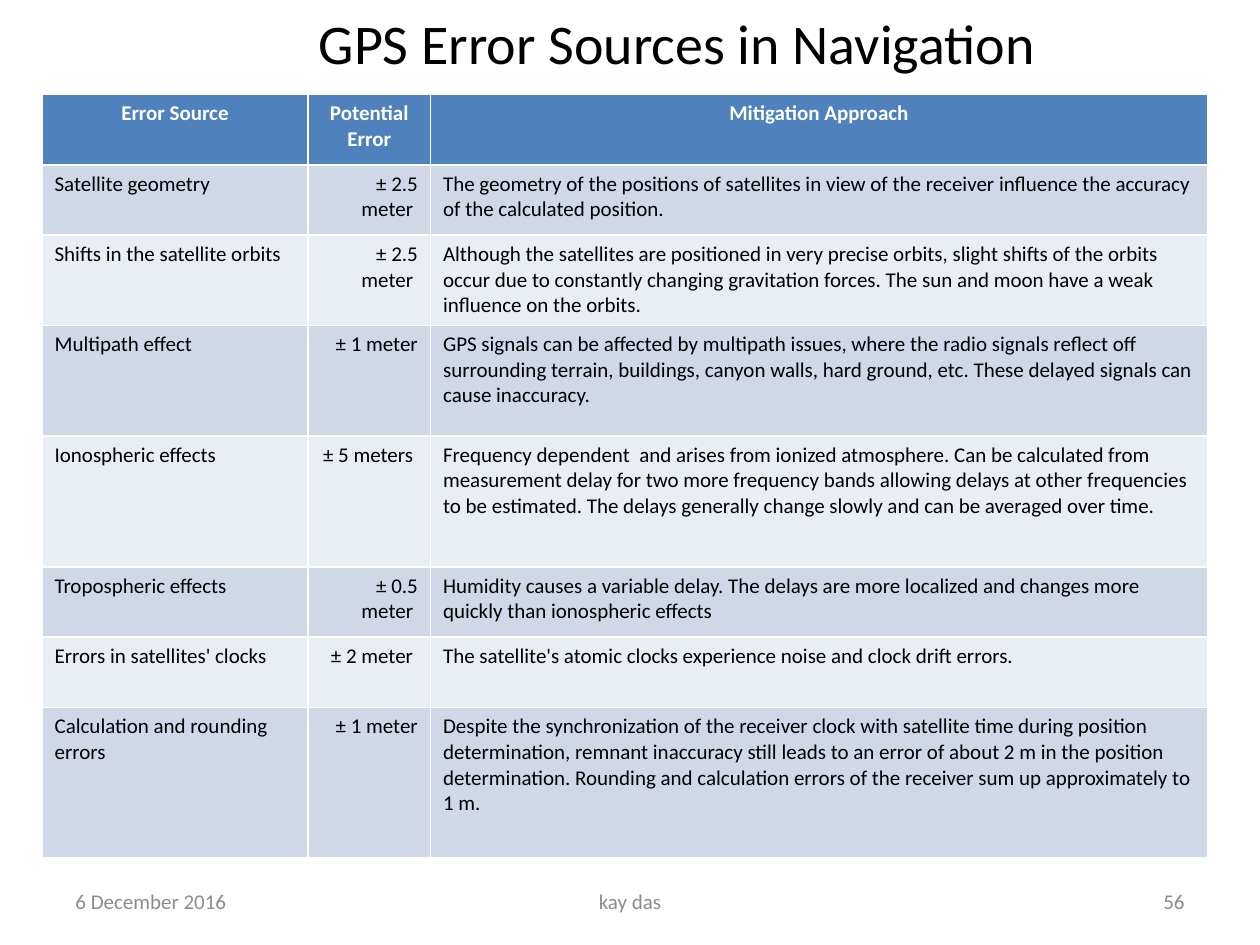
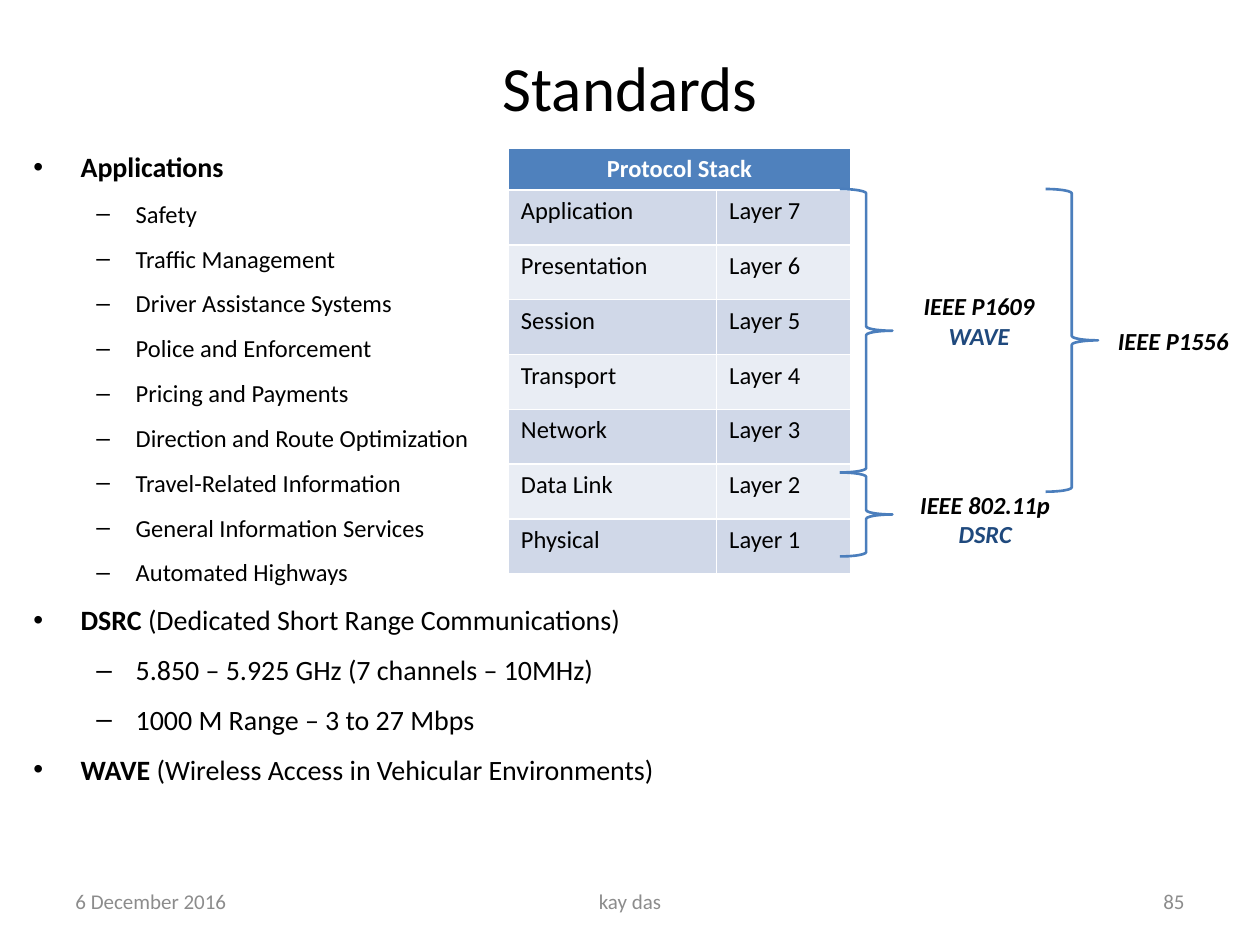
from pptx import Presentation
from pptx.dml.color import RGBColor
from pptx.enum.shapes import MSO_SHAPE
from pptx.enum.text import MSO_ANCHOR, PP_ALIGN
from pptx.util import Pt
from lxml.etree import SubElement
from pptx.oxml.ns import qn

COLORS = {
    "text": "000000",
    "header": "4F81BD",
    "header_text": "FFFFFF",
    "band_dark": "D0D8E8",
    "band_light": "E9EDF4",
    "brace": "4B7EBC",
    "accent": "1F497D",
    "footer": "8C8C8C",
}
LEFT, CENTER, RIGHT = PP_ALIGN.LEFT, PP_ALIGN.CENTER, PP_ALIGN.RIGHT


def add_run(p, text, size, color="text", **extra):
    r = p.add_run()
    r.text = text
    for name, value in {"name": "Calibri", "size": Pt(size), "bold": False, **extra}.items():
        setattr(r.font, name, value)
    r.font.color.rgb = RGBColor.from_string(COLORS[color])


def add_banded_table(s, x, y, widths, heights, rows, size, aligns):
    """Add a table whose first row is the header and whose other rows alternate."""
    tbl = s.shapes.add_table(len(rows), len(widths), Pt(x), Pt(y),
                             Pt(sum(widths)), Pt(sum(heights))).table
    for col, width in zip(tbl.columns, widths):
        col.width = Pt(width)
    for i, (row, height) in enumerate(zip(rows, heights)):
        tbl.rows[i].height = Pt(height)
        fill = "header" if i == 0 else ("band_light", "band_dark")[i % 2]
        for j, text in enumerate(row):
            cell = tbl.cell(i, j)
            cell.fill.solid()
            cell.fill.fore_color.rgb = RGBColor.from_string(COLORS[fill])
            p = cell.text_frame.paragraphs[0]
            p.alignment = CENTER if i == 0 else aligns[j]
            if text:
                add_run(p, text, size, "text" if i else "header_text", bold=i == 0)
    return tbl


prs = Presentation()
prs.slide_width, prs.slide_height = Pt(720), Pt(540)
errors = prs.slides.add_slide(prs.slide_layouts[6])
standards = prs.slides.add_slide(prs.slide_layouts[6])

# Titles and footers: slide, box, alignment, text, size, color
lines = [
    (errors, (90, 0, 594, 48), CENTER, "GPS Error Sources in Navigation", 32, "text"),
    (standards, (36, 18, 648, 63), CENTER, "Standards", 36, "text"),
]
for s, number in ((errors, "56"), (standards, "85")):
    for x, w, align, text in ((36, 168, LEFT, "6 December 2016"),
                              (246, 228, CENTER, "kay das"),
                              (516, 168, RIGHT, number)):
        lines.append((s, (x, 500.5, w, 28.8), align, text, 12, "footer"))

for s, box, align, text, size, color in lines:
    tf = s.shapes.add_textbox(*map(Pt, box)).text_frame
    tf.word_wrap = True
    tf.vertical_anchor = MSO_ANCHOR.MIDDLE
    p = tf.paragraphs[0]
    p.alignment = align
    add_run(p, text, size, color)

# Slide 1: error sources
error_rows = [
    ("Error Source", "Potential Error", "Mitigation Approach"),
    ("Satellite geometry", "± 2.5 meter ",
     "The geometry of the positions of satellites in view of the receiver influence "
     "the accuracy of the calculated position."),
    ("Shifts in the satellite orbits", "± 2.5 meter ",
     "Although the satellites are positioned in very precise orbits, slight shifts of "
     "the orbits occur due to constantly changing gravitation forces. The sun and moon "
     "have a weak influence on the orbits."),
    ("Multipath effect", "± 1 meter",
     "GPS signals can be affected by multipath issues, where the radio signals reflect "
     "off surrounding terrain, buildings, canyon walls, hard ground, etc. These delayed "
     "signals can cause inaccuracy."),
    ("Ionospheric effects", "± 5 meters ",
     "Frequency dependent  and arises from ionized atmosphere. Can be calculated from "
     "measurement delay for two more frequency bands allowing delays at other "
     "frequencies to be estimated. The delays generally change slowly and can be "
     "averaged over time."),
    ("Tropospheric effects", "± 0.5 meter ",
     "Humidity causes a variable delay. The delays are more localized and changes more "
     "quickly than ionospheric effects"),
    ("Errors in satellites' clocks", "± 2 meter ",
     "The satellite's atomic clocks experience noise and clock drift errors."),
    ("Calculation and rounding errors", "± 1 meter",
     "Despite the synchronization of the receiver clock with satellite time during "
     "position determination, remnant inaccuracy still leads to an error of about 2 m "
     "in the position determination. Rounding and calculation errors of the receiver "
     "sum up approximately to 1 m."),
]
add_banded_table(errors, 24, 54, (152, 70, 444),
                 (40.2, 40.2, 51.6, 63.2, 74.8, 40.2, 40.2, 86),
                 error_rows, 12, (LEFT, RIGHT, LEFT))

# Slide 2: outline as level, size, bold part, plain part
applications = ("Safety", "Traffic Management", "Driver Assistance Systems",
                "Police and Enforcement", "Pricing and Payments",
                "Direction and Route Optimization", "Travel-Related Information",
                "General Information Services", "Automated Highways")
outline = [
    (0, 16, "Applications", ""),
    *((1, 14, "", name) for name in applications),
    (0, 16, "DSRC", " (Dedicated Short Range Communications)"),
    (1, 16, "", "5.850 – 5.925 GHz (7 channels – 10MHz)"),
    (1, 16, "", "1000 M Range – 3 to 27 Mbps"),
    (0, 16, "WAVE", " (Wireless Access in Vehicular Environments)"),
]
bullets = (("•", 27, -27), ("–", 58.5, -22.5))
tf = standards.shapes.add_textbox(Pt(12), Pt(82), Pt(432), Pt(399)).text_frame
tf.word_wrap = True
for i, (level, size, bold, plain) in enumerate(outline):
    p = tf.add_paragraph() if i else tf.paragraphs[0]
    p.level = level
    p.space_before = Pt(0.2 * size if i else 0)
    p.space_after = Pt(6)
    char, margin, indent = bullets[level]
    pPr = p._p.get_or_add_pPr()
    pPr.set("marL", str(Pt(margin)))
    pPr.set("indent", str(Pt(indent)))
    SubElement(pPr, qn("a:buFont"), typeface="Arial")
    SubElement(pPr, qn("a:buChar"), char=char)
    if bold:
        add_run(p, bold, size, bold=True)
    if plain:
        add_run(p, plain, size)

layers = ("Application", "Presentation", "Session", "Transport", "Network",
          "Data Link", "Physical")
stack_rows = [("Protocol Stack", "")]
stack_rows += [(name, f"Layer {len(layers) - i}") for i, name in enumerate(layers)]
stack = add_banded_table(standards, 290.5, 84.5, (119, 76.5), [24.2] + [31.3] * 7,
                         stack_rows, 14, (LEFT, LEFT))
stack.cell(0, 0).merge(stack.cell(0, 1))

for x, y, h in ((480, 270, 48), (480, 108, 162), (597.5, 108, 173)):
    sp = standards.shapes.add_shape(MSO_SHAPE.RIGHT_BRACE, Pt(x), Pt(y), Pt(30), Pt(h))
    sp.shadow.inherit = False
    sp.fill.background()
    sp.line.color.rgb = RGBColor.from_string(COLORS["brace"])
    sp.line.width = Pt(1.5)

for box, standard, short_name in (((512, 163, 95, 41), "IEEE P1609", "WAVE"),
                                  ((510.5, 276.5, 105, 41), "IEEE 802.11p", "DSRC"),
                                  ((623, 182.5, 95, 24), "IEEE P1556", "")):
    tf = standards.shapes.add_textbox(*map(Pt, box)).text_frame
    tf.word_wrap = False
    p = tf.paragraphs[0]
    p.alignment = CENTER
    add_run(p, standard, 14, bold=True, italic=True)
    if short_name:
        p = tf.add_paragraph()
        p.alignment = CENTER
        add_run(p, short_name, 14, "accent", bold=True, italic=True)

prs.save("out.pptx")
